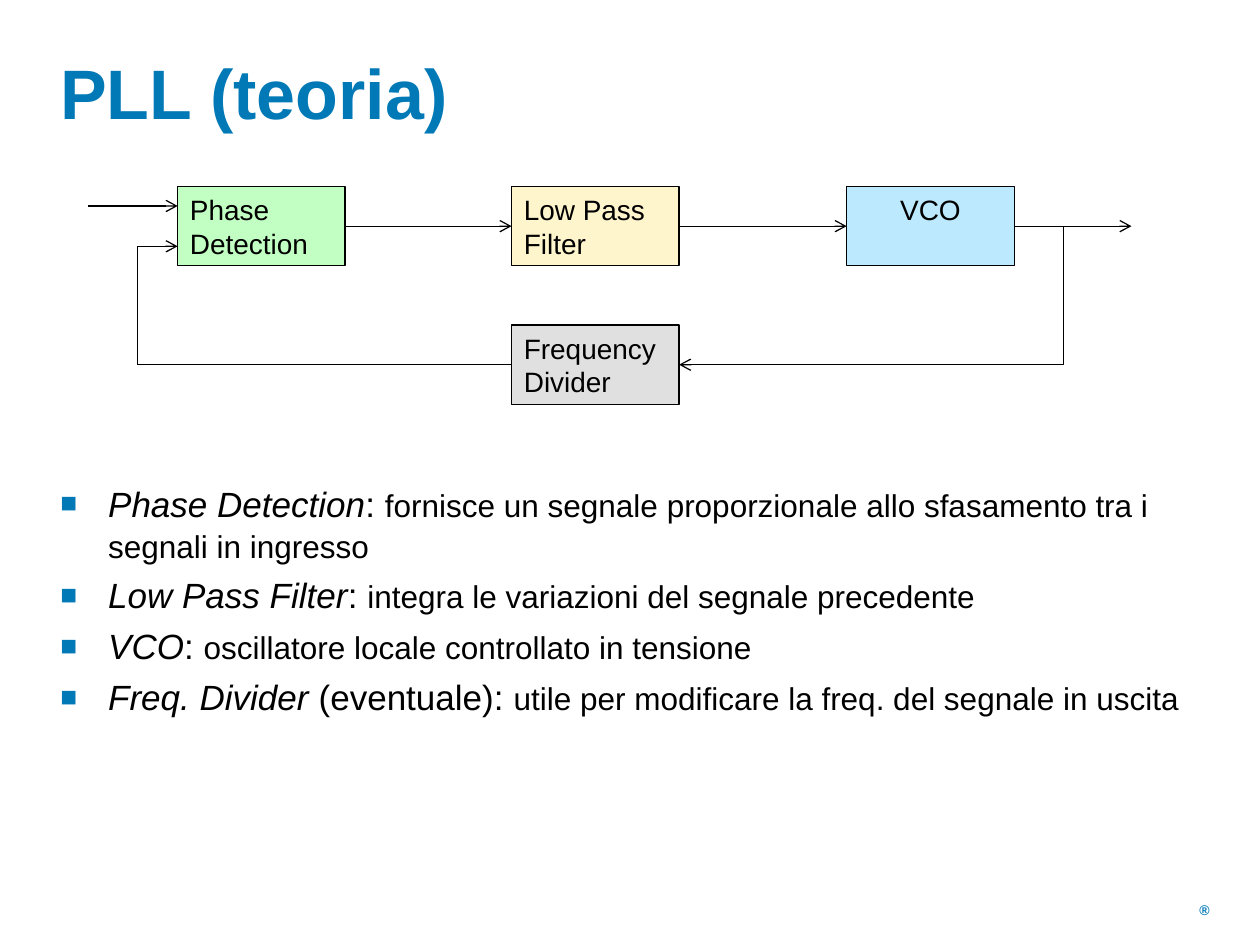
from dataclasses import dataclass

from lxml import etree
from pptx import Presentation
from pptx.dml.color import RGBColor
from pptx.enum.shapes import MSO_CONNECTOR, MSO_SHAPE
from pptx.enum.text import MSO_ANCHOR, PP_ALIGN
from pptx.oxml.ns import qn
from pptx.util import Inches, Pt

RECTANGLE = MSO_SHAPE.RECTANGLE
STRAIGHT, ELBOW = MSO_CONNECTOR.STRAIGHT, MSO_CONNECTOR.ELBOW
TOP = MSO_ANCHOR.TOP
LEFT, CENTER = PP_ALIGN.LEFT, PP_ALIGN.CENTER
LEFT_SIDE, RIGHT_SIDE = 1, 3


@dataclass(frozen=True)
class Theme:
    font: str = "Arial"
    accent: str = "0079B6"
    ink: str = "000000"
    shadow: str = "DDDDDD"
    green: str = "C2FFC2"
    yellow: str = "FFF5CC"
    blue: str = "BDE9FF"
    grey: str = "E0E0E0"
    title_size: int = 40
    term_size: int = 20
    body_size: int = 18
    block_size: int = 16
    mark_size: int = 8
    line_width: float = 0.75


THEME = Theme()
BLOCK_WIDTH, BLOCK_HEIGHT = 1.33, 0.63
CHAIN_TOP, DIVIDER_TOP = 1.48, 2.58
CHAIN_MIDDLE = CHAIN_TOP + BLOCK_HEIGHT / 2
DIVIDER_MIDDLE = DIVIDER_TOP + BLOCK_HEIGHT / 2
DETECTOR_LEFT, FILTER_LEFT, VCO_LEFT = 1.41, 4.06, 6.72
INPUT_OFFSET = 0.16
FEEDBACK_LEFT, FEEDBACK_RIGHT = 1.09, 8.44

DEFINITIONS = [
    ("Phase Detection", ": ",
     "fornisce un segnale proporzionale allo sfasamento tra i segnali in ingresso"),
    ("Low Pass Filter", ": ", "integra le variazioni del segnale precedente"),
    ("VCO", ": ", "oscillatore locale controllato in tensione"),
    ("Freq. Divider ", "(eventuale): ",
     "utile per modificare la freq. del segnale in uscita"),
]


def style_font(font, size, color, bold=False, italic=False):
    font.name = THEME.font
    font.size = Pt(size)
    font.bold = bold
    font.italic = italic
    font.color.rgb = RGBColor.from_string(color)


def add_text_box(slide, left, top, width, height, wrap=True):
    box = slide.shapes.add_textbox(Inches(left), Inches(top), Inches(width), Inches(height))
    box.text_frame.word_wrap = wrap
    return box.text_frame


def add_text_shadow(span):
    effects = etree.Element(qn("a:effectLst"))
    shadow = etree.SubElement(effects, qn("a:outerShdw"), dist="38100", dir="2700000")
    etree.SubElement(shadow, qn("a:srgbClr"), val=THEME.shadow)
    fill = span.font._element.find(qn("a:solidFill"))
    fill.addnext(effects)


def add_title(slide, text):
    frame = add_text_box(slide, 0.38, 0.3, 9.11, 1)
    frame.margin_top = Inches(0.09)
    frame.text = text
    span = frame.paragraphs[0].runs[0]
    style_font(span.font, THEME.title_size, THEME.accent, bold=True)
    add_text_shadow(span)


def add_mark(slide, text):
    frame = add_text_box(slide, 9.42, 7.11, 0.28, 0.23, wrap=False)
    frame.text = text
    style_font(frame.paragraphs[0].runs[0].font, THEME.mark_size, THEME.accent, bold=True)


def add_bullet(para):
    properties = para._p.get_or_add_pPr()
    properties.set("marL", str(Inches(0.38)))
    properties.set("indent", str(-Inches(0.38)))
    color = etree.SubElement(properties, qn("a:buClr"))
    etree.SubElement(color, qn("a:srgbClr"), val=THEME.accent)
    etree.SubElement(properties, qn("a:buSzPct"), val="80000")
    etree.SubElement(properties, qn("a:buFont"), typeface=THEME.font)
    etree.SubElement(properties, qn("a:buChar"), char="■")


def add_definitions(slide, definitions):
    frame = add_text_box(slide, 0.38, 3.75, 9.11, 2.91)
    for index, (term, link, meaning) in enumerate(definitions):
        para = frame.add_paragraph() if index else frame.paragraphs[0]
        add_bullet(para)
        para.line_spacing = 1.08
        if index:
            para.space_before = Pt(3.2)
        for text, size, italic in ((term, THEME.term_size, True),
                                   (link, THEME.term_size, False),
                                   (meaning, THEME.body_size, False)):
            span = para.add_run()
            span.text = text
            style_font(span.font, size, THEME.ink, italic=italic)


def add_block(slide, text, left, top, color, align=LEFT):
    block = slide.shapes.add_shape(RECTANGLE, Inches(left), Inches(top),
                                   Inches(BLOCK_WIDTH), Inches(BLOCK_HEIGHT))
    block.shadow.inherit = False
    block.fill.solid()
    block.fill.fore_color.rgb = RGBColor.from_string(color)
    block.line.color.rgb = RGBColor.from_string(THEME.ink)
    block.line.width = Pt(THEME.line_width)
    frame = block.text_frame
    frame.vertical_anchor = TOP
    frame.text = text
    for para in frame.paragraphs:
        para.alignment = align
        style_font(para.runs[0].font, THEME.block_size, THEME.ink)
    return block


def add_line(slide, start, end, source=None, target=None, arrow=True, kind=STRAIGHT):
    """Draw from start to end, joining source's right or left side to target's facing side."""
    line = slide.shapes.add_connector(kind, *(Inches(value) for value in (*start, *end)))
    side, facing = (RIGHT_SIDE, LEFT_SIDE) if end[0] > start[0] else (LEFT_SIDE, RIGHT_SIDE)
    if source is not None:
        line.begin_connect(source, side)
    if target is not None:
        line.end_connect(target, facing)
    line.line.color.rgb = RGBColor.from_string(THEME.ink)
    line.line.width = Pt(THEME.line_width)
    if arrow:
        etree.SubElement(line.line._get_or_add_ln(), qn("a:tailEnd"), type="arrow")
    etree.SubElement(line._element.spPr, qn("a:effectLst"))
    return line


def turn_at_start(connector):
    """Make an elbow connector run vertically first."""
    guides = connector._element.spPr.find(qn("a:prstGeom")).get_or_add_avLst()
    etree.SubElement(guides, qn("a:gd"), name="adj1", fmla="val 0")


def add_loop(slide):
    detector = add_block(slide, "Phase\nDetection", DETECTOR_LEFT, CHAIN_TOP, THEME.green)
    low_pass = add_block(slide, "Low Pass\nFilter", FILTER_LEFT, CHAIN_TOP, THEME.yellow)
    vco = add_block(slide, "VCO", VCO_LEFT, CHAIN_TOP, THEME.blue, CENTER)
    divider = add_block(slide, "Frequency\nDivider", FILTER_LEFT, DIVIDER_TOP, THEME.grey)

    reference_y = CHAIN_MIDDLE - INPUT_OFFSET
    feedback_y = CHAIN_MIDDLE + INPUT_OFFSET
    corner = (FEEDBACK_LEFT, DIVIDER_MIDDLE)
    add_line(slide, (0.7, reference_y), (DETECTOR_LEFT, reference_y))
    add_line(slide, (DETECTOR_LEFT + BLOCK_WIDTH, CHAIN_MIDDLE),
             (FILTER_LEFT, CHAIN_MIDDLE), detector, low_pass)
    add_line(slide, (FILTER_LEFT + BLOCK_WIDTH, CHAIN_MIDDLE),
             (VCO_LEFT, CHAIN_MIDDLE), low_pass, vco)
    add_line(slide, (VCO_LEFT + BLOCK_WIDTH, CHAIN_MIDDLE), (8.98, CHAIN_MIDDLE), vco)
    turn_at_start(add_line(slide, (FEEDBACK_RIGHT, CHAIN_MIDDLE),
                           (FILTER_LEFT + BLOCK_WIDTH, DIVIDER_MIDDLE),
                           target=divider, kind=ELBOW))
    add_line(slide, (FILTER_LEFT, DIVIDER_MIDDLE), corner, divider, arrow=False)
    add_line(slide, corner, (FEEDBACK_LEFT, feedback_y), arrow=False)
    add_line(slide, (FEEDBACK_LEFT, feedback_y), (DETECTOR_LEFT, feedback_y))


def main():
    deck = Presentation()
    deck.slide_width, deck.slide_height = Inches(10), Inches(7.5)
    page = deck.slides.add_slide(deck.slide_layouts[6])
    add_mark(page, "®")
    add_title(page, "PLL (teoria)")
    add_definitions(page, DEFINITIONS)
    add_loop(page)
    deck.save("out.pptx")


if __name__ == "__main__":
    main()
